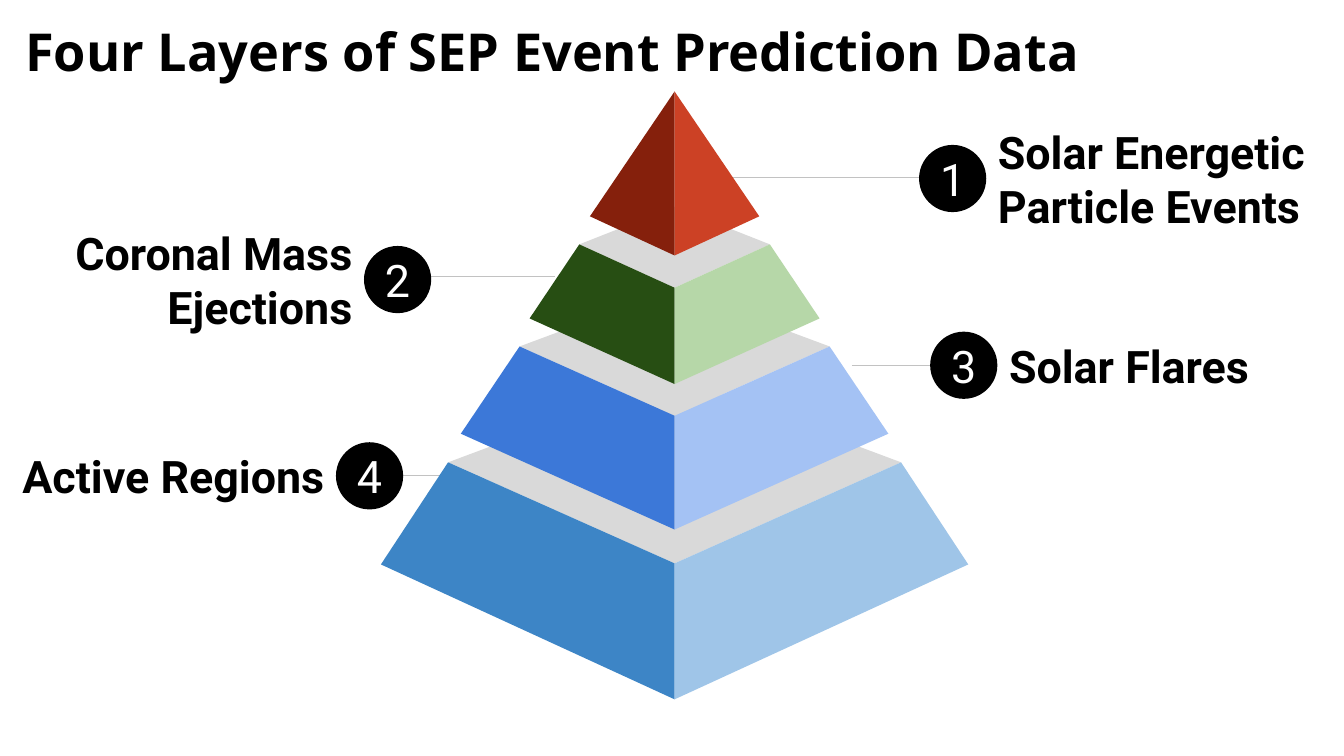
from dataclasses import dataclass

from lxml.etree import SubElement
from pptx import Presentation
from pptx.dml.color import RGBColor
from pptx.enum.shapes import MSO_CONNECTOR, MSO_SHAPE
from pptx.enum.text import MSO_ANCHOR, PP_ALIGN
from pptx.oxml.ns import qn
from pptx.util import Cm, Pt

COLORS = {
    "ink": "000000",
    "paper": "FFFFFF",
    "leader": "C2C2C2",
    "lid": "D9D9D9",
    "dark red": "85200C",
    "red": "CC4125",
    "dark green": "274E13",
    "light green": "B6D7A8",
    "blue": "3C78D8",
    "light blue": "A4C2F4",
    "sea blue": "3D85C6",
    "sky blue": "9FC5E8",
}
AXIS_X = 12.75  # vertical edge shared by all layers, in cm
BADGE_SIZE = 1.27
LABEL_HEIGHT = 1.6
LABEL_GAP = 0.22


@dataclass
class Layer:
    """One pyramid slice; half widths and heights on the slide in cm."""
    top_half: float
    top_y: float
    top_front_y: float
    base_half: float
    base_y: float
    base_front_y: float
    left_color: str
    right_color: str
    lid_back_y: float | None = None


@dataclass
class Callout:
    number: str
    label: str
    badge_left: float
    badge_top: float
    label_width: float
    leader_x: float
    leader_y: float
    on_left: bool = False


# Bottom layer first, so each upper layer covers the lid below it
LAYERS = [
    Layer(4.28, 8.74, 10.65, 5.55, 10.67, 13.22, "sea blue", "sky blue", 7.14),
    Layer(2.93, 6.55, 7.86, 4.04, 8.2, 10.01, "blue", "light blue", 5.46),
    Layer(1.8, 4.62, 5.44, 2.74, 6.02, 7.26, "dark green", "light green", 3.91),
    Layer(0, 1.73, 1.73, 1.6, 4.09, 4.83, "dark red", "red"),
]
CALLOUTS = [
    Callout("1", "Solar Energetic Particle Events", 17.37, 2.74, 6.54, 13.61, 3.35),
    Callout("2", "Coronal Mass Ejections", 6.88, 4.65, 6.05, 10.49, 5.23, True),
    Callout("3", "Solar Flares", 17.58, 6.27, 5.03, 16.1, 6.91),
    Callout("4", "Active Regions", 6.35, 8.36, 6.05, 10.49, 8.99, True),
]


def rgb(name: str) -> RGBColor:
    return RGBColor.from_string(COLORS[name])


def paint(shape, color: str) -> None:
    shape.shadow.inherit = False
    shape.fill.solid()
    shape.fill.fore_color.rgb = rgb(color)
    shape.line.fill.background()


def write(shape, text: str, size: float, font: str, color: str, bold: bool,
          align=PP_ALIGN.LEFT, anchor=MSO_ANCHOR.MIDDLE,
          inset_x: float = 0, inset_y: float = 0) -> None:
    frame = shape.text_frame
    frame.text = text
    frame.word_wrap = True
    frame.vertical_anchor = anchor
    frame.margin_left = frame.margin_right = Cm(inset_x)
    frame.margin_top = frame.margin_bottom = Cm(inset_y)
    paragraph = frame.paragraphs[0]
    paragraph.alignment = align
    run_font = paragraph.runs[0].font
    run_font.name, run_font.size, run_font.bold = font, Pt(size), bold
    run_font.color.rgb = rgb(color)


def draw_polygon(shapes, points: list[tuple[float, float]], color: str) -> None:
    corners = [(Cm(x), Cm(y)) for x, y in points]
    builder = shapes.build_freeform(*corners[0])
    builder.add_line_segments(corners[1:], close=True)
    paint(builder.convert_to_shape(), color)


def draw_layer(shapes, layer: Layer) -> None:
    if layer.lid_back_y is not None:
        draw_polygon(shapes, [(AXIS_X - layer.top_half, layer.top_y),
                              (AXIS_X, layer.top_front_y),
                              (AXIS_X + layer.top_half, layer.top_y),
                              (AXIS_X, layer.lid_back_y)], "lid")
    for side, color in ((-1, layer.left_color), (1, layer.right_color)):
        face = [(AXIS_X + side * layer.base_half, layer.base_y),
                (AXIS_X, layer.base_front_y),
                (AXIS_X, layer.top_front_y)]
        if layer.top_half:
            face.append((AXIS_X + side * layer.top_half, layer.top_y))
        draw_polygon(shapes, face, color)


def draw_leader(shapes, callout: Callout) -> None:
    badge_x = callout.badge_left + BADGE_SIZE / 2
    leader = shapes.add_connector(
        MSO_CONNECTOR.STRAIGHT, Cm(callout.leader_x), Cm(callout.leader_y),
        Cm(badge_x), Cm(callout.leader_y))
    leader.line.color.rgb = rgb("leader")
    leader.line.width = Pt(0.75)
    SubElement(leader._element.spPr, qn("a:effectLst"))


def draw_callout(shapes, callout: Callout) -> None:
    badge = shapes.add_shape(
        MSO_SHAPE.OVAL, Cm(callout.badge_left), Cm(callout.badge_top),
        Cm(BADGE_SIZE), Cm(BADGE_SIZE))
    paint(badge, "ink")
    write(badge, callout.number, 24, "Roboto", "paper", False, PP_ALIGN.CENTER)

    if callout.on_left:
        label_left = callout.badge_left - LABEL_GAP - callout.label_width
        align = PP_ALIGN.RIGHT
    else:
        label_left = callout.badge_left + BADGE_SIZE + LABEL_GAP
        align = PP_ALIGN.LEFT
    label_top = callout.badge_top - (LABEL_HEIGHT - BADGE_SIZE) / 2
    label = shapes.add_textbox(Cm(label_left), Cm(label_top),
                               Cm(callout.label_width), Cm(LABEL_HEIGHT))
    write(label, callout.label, 24, "Roboto", "ink", True, align)


def main() -> None:
    deck = Presentation()
    deck.slide_width, deck.slide_height = Cm(25.4), Cm(14.29)
    shapes = deck.slides.add_slide(deck.slide_layouts[6]).shapes

    # Title
    title = shapes.add_textbox(Cm(0.23), Cm(0.18), Cm(24.94), Cm(1.6))
    write(title, "Four Layers of SEP Event Prediction Data", 28, "Open Sans",
          "ink", True, anchor=MSO_ANCHOR.TOP, inset_x=0.25, inset_y=0.18)

    # Leader lines run behind the pyramid and the badges
    for callout in CALLOUTS:
        draw_leader(shapes, callout)

    # Pyramid
    for layer in LAYERS:
        draw_layer(shapes, layer)

    # Numbered labels
    for callout in CALLOUTS:
        draw_callout(shapes, callout)

    deck.save("out.pptx")


if __name__ == "__main__":
    main()
